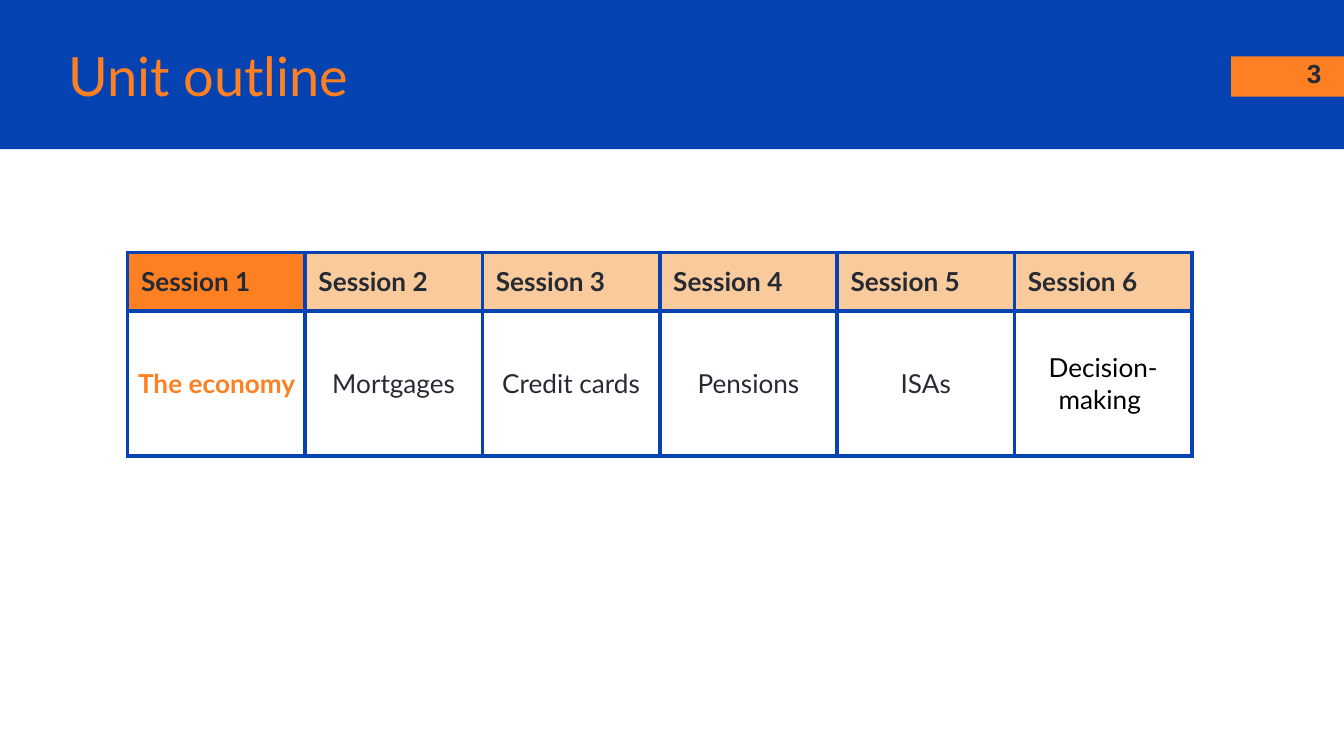
from dataclasses import dataclass

from lxml.etree import SubElement
from pptx import Presentation
from pptx.dml.color import RGBColor
from pptx.enum.shapes import MSO_SHAPE
from pptx.enum.text import MSO_ANCHOR, PP_ALIGN
from pptx.oxml.ns import qn
from pptx.util import Inches, Pt


@dataclass(frozen=True)
class Theme:
    blue: str = "0543B3"
    orange: str = "FF8022"
    peach: str = "F9CB9C"
    ink: str = "262A33"
    black: str = "000000"
    font: str = "Lato"
    number_font: str = "Arial"
    title_size: float = 29
    body_size: float = 14
    border_width: float = 2.25


THEME = Theme()


@dataclass(frozen=True)
class Session:
    topic: tuple[str, ...]
    color: str = THEME.ink
    current: bool = False


SESSIONS = (
    Session(("The economy ",), THEME.orange, current=True),
    Session(("Mortgages",)),
    Session(("Credit cards",)),
    Session(("Pensions",)),
    Session(("ISAs",)),
    Session(("Decision-", "making "), THEME.black),
)


def write(frame, lines: tuple[str, ...], color: str, size: float = THEME.body_size,
          bold: bool = False, font: str = THEME.font, align=PP_ALIGN.LEFT) -> None:
    frame.text = "\n".join(lines)
    for paragraph in frame.paragraphs:
        paragraph.alignment = align
        for span in paragraph.runs:
            span.font.name = font
            span.font.size = Pt(size)
            span.font.bold = bold
            span.font.color.rgb = RGBColor.from_string(color)


def add_bar(page, left: float, top: float, width: float, height: float, color: str) -> None:
    bar = page.shapes.add_shape(MSO_SHAPE.RECTANGLE, Inches(left), Inches(top),
                                Inches(width), Inches(height))
    bar.shadow.inherit = False
    bar.fill.solid()
    bar.fill.fore_color.rgb = RGBColor.from_string(color)
    bar.line.fill.background()


def add_box(page, left: float, top: float, width: float, height: float, anchor):
    box = page.shapes.add_textbox(Inches(left), Inches(top), Inches(width), Inches(height))
    frame = box.text_frame
    frame.word_wrap = True
    frame.vertical_anchor = anchor
    frame.margin_left = frame.margin_right = Inches(0.1)
    frame.margin_top = frame.margin_bottom = Inches(0.1)
    return frame


def style_cell(cell, margin: float, fill: str | None = None) -> None:
    cell.vertical_anchor = MSO_ANCHOR.MIDDLE
    cell.margin_left = cell.margin_right = Inches(margin)
    cell.margin_top = cell.margin_bottom = Inches(margin)
    # Borders come before the fill in the cell properties
    properties = cell._tc.get_or_add_tcPr()
    for side in ("lnL", "lnR", "lnT", "lnB"):
        line = SubElement(properties, qn(f"a:{side}"), w=str(Pt(THEME.border_width)))
        solid = SubElement(line, qn("a:solidFill"))
        SubElement(solid, qn("a:srgbClr"), val=THEME.blue)
    if fill:
        cell.fill.solid()
        cell.fill.fore_color.rgb = RGBColor.from_string(fill)
    else:
        cell.fill.background()


def add_outline(page, sessions: tuple[Session, ...]) -> None:
    column_width, row_heights = 1.32, (0.43, 1.08)
    table = page.shapes.add_table(
        len(row_heights), len(sessions), Inches(0.95), Inches(1.88),
        Inches(column_width * len(sessions)), Inches(sum(row_heights))).table
    table.first_row = table.horz_banding = False
    for row, height in zip(table.rows, row_heights):
        row.height = Inches(height)
    for index, session in enumerate(sessions):
        table.columns[index].width = Inches(column_width)
        header, topic = table.cell(0, index), table.cell(1, index)
        style_cell(header, 0.1, THEME.orange if session.current else THEME.peach)
        write(header.text_frame, (f"Session {index + 1}",), THEME.ink, bold=True)
        style_cell(topic, 0.07)
        write(topic.text_frame, session.topic, session.color,
              bold=session.current, align=PP_ALIGN.CENTER)


def main() -> None:
    # Widescreen page, 16 by 9
    deck = Presentation()
    deck.slide_width = Inches(10)
    deck.slide_height = Inches(10 * 9 / 16)
    page = deck.slides.add_slide(deck.slide_layouts[6])

    # Header band and page number
    add_bar(page, 0, 0, 10, 1.11, THEME.blue)
    add_bar(page, 9.16, 0.42, 0.84, 0.3, THEME.orange)
    number = add_box(page, 9.14, 0.33, 0.79, 0.43, MSO_ANCHOR.TOP)
    write(number, ("3",), THEME.ink, bold=True, font=THEME.number_font, align=PP_ALIGN.RIGHT)

    # Title
    title = add_box(page, 0.41, 0.28, 8.46, 0.56, MSO_ANCHOR.MIDDLE)
    write(title, ("Unit outline",), THEME.orange, THEME.title_size)

    # Session table
    add_outline(page, SESSIONS)
    deck.save("out.pptx")


if __name__ == "__main__":
    main()
